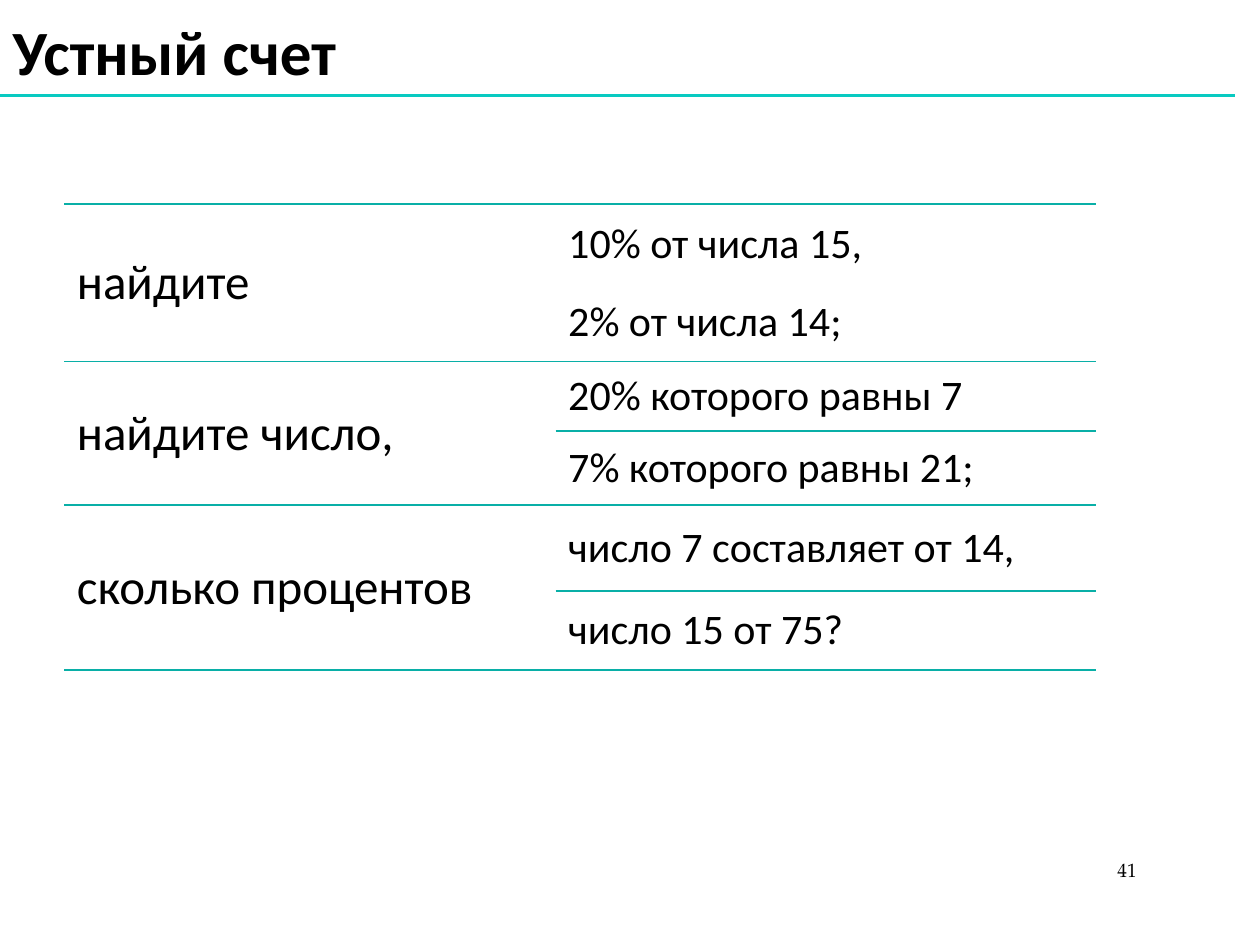
from lxml.etree import SubElement
from pptx import Presentation
from pptx.dml.color import RGBColor
from pptx.enum.shapes import MSO_CONNECTOR
from pptx.enum.text import MSO_ANCHOR, PP_ALIGN
from pptx.oxml import parse_xml
from pptx.oxml.ns import nsdecls, qn
from pptx.util import Inches, Pt

COLORS = {"text": "000000", "rule": "08CAC1", "border": "09AFA7"}
PLAIN_TABLE_STYLE = "{2D5ABB26-0587-4C30-8999-92F81FD0307C}"
COLUMN_WIDTHS = [3.9, 4.29]
ROW_HEIGHTS = [0.63, 0.62, 0.55, 0.59, 0.68, 0.63]
TASKS = [
    ("найдите", ["10% от числа 15,", "2% от числа 14;"]),
    ("найдите число,", ["20% которого равны 7", "7% которого равны 21;"]),
    ("сколько процентов", ["число 7 составляет от 14,", "число 15 от 75?"]),
]


class SlideBuilder:
    def __init__(self, slide, font="Calibri"):
        self.slide = slide
        self.font = font

    def set_text(self, frame, text, size, font=None, bold=False, **paragraph_format):
        frame.text = text
        paragraph = frame.paragraphs[0]
        for name, value in paragraph_format.items():
            setattr(paragraph, name, value)
        style = {"name": font or self.font, "size": Pt(size), "bold": bold}
        for name, value in style.items():
            setattr(paragraph.font, name, value)
        paragraph.font.color.rgb = RGBColor.from_string(COLORS["text"])

    def title(self, text, left, top, width, height):
        heading = self.slide.shapes.title
        place = {"left": left, "top": top, "width": width, "height": height}
        for name, value in place.items():
            setattr(heading, name, Inches(value))
        heading.text_frame.vertical_anchor = MSO_ANCHOR.BOTTOM
        self.set_text(heading.text_frame, text, 36, bold=True,
                      alignment=PP_ALIGN.LEFT, line_spacing=0.9)

    def text(self, text, left, top, width, height, size, font, alignment):
        box = self.slide.shapes.add_textbox(*map(Inches, (left, top, width, height)))
        box.text_frame.word_wrap = True
        box.text_frame.vertical_anchor = MSO_ANCHOR.MIDDLE
        self.set_text(box.text_frame, text, size, font, alignment=alignment)

    def line(self, x1, y1, x2, y2, width):
        rule = self.slide.shapes.add_connector(
            MSO_CONNECTOR.STRAIGHT, *map(Inches, (x1, y1, x2, y2)))
        rule.line.color.rgb = RGBColor.from_string(COLORS["rule"])
        rule.line.width = Pt(width)
        SubElement(rule._element.spPr, qn("a:effectLst"))

    def border(self, cell, sides):
        properties = cell._tc.get_or_add_tcPr()
        for position, side in enumerate(sides):
            properties.insert(position, parse_xml(
                f'<a:ln{side} {nsdecls("a")} w="{Pt(1)}"><a:solidFill>'
                f'<a:srgbClr val="{COLORS["border"]}"/></a:solidFill></a:ln{side}>'))

    def cell(self, cell, text, size, sides):
        self.set_text(cell.text_frame, text, size)
        cell.vertical_anchor = MSO_ANCHOR.MIDDLE
        cell.fill.background()
        self.border(cell, sides)

    def task_table(self, left, top):
        frame = self.slide.shapes.add_table(
            len(ROW_HEIGHTS), len(COLUMN_WIDTHS), Inches(left), Inches(top),
            Inches(sum(COLUMN_WIDTHS)), Inches(sum(ROW_HEIGHTS)))
        table = frame.table
        table.first_row = table.horz_banding = False
        table._tbl.tblPr.find(qn("a:tableStyleId")).text = PLAIN_TABLE_STYLE
        for column, width in zip(table.columns, COLUMN_WIDTHS):
            column.width = Inches(width)
        for row, height in zip(table.rows, ROW_HEIGHTS):
            row.height = Inches(height)
        for index, (task, items) in enumerate(TASKS):
            first = 2 * index
            table.cell(first, 0).merge(table.cell(first + 1, 0))
            self.cell(table.cell(first, 0), task, 28, "TB")
            self.border(table.cell(first + 1, 0), "B")
            for offset, (item, side) in enumerate(zip(items, "TB")):
                self.cell(table.cell(first + offset, 1), item, 24, side)


def main():
    presentation = Presentation()
    presentation.slide_width = Inches(10)
    presentation.slide_height = Inches(7.5)
    builder = SlideBuilder(presentation.slides.add_slide(presentation.slide_layouts[5]))
    builder.text("41", 8.31, 6.75, 0.81, 0.3, 11, "TeX Gyre Pagella", PP_ALIGN.RIGHT)
    builder.title("Устный счет", 0, 0.03, 7.88, 0.73)
    builder.line(0, 0.76, 9.8, 0.76, 1.5)
    builder.task_table(0.51, 1.62)
    presentation.save("out.pptx")


if __name__ == "__main__":
    main()
